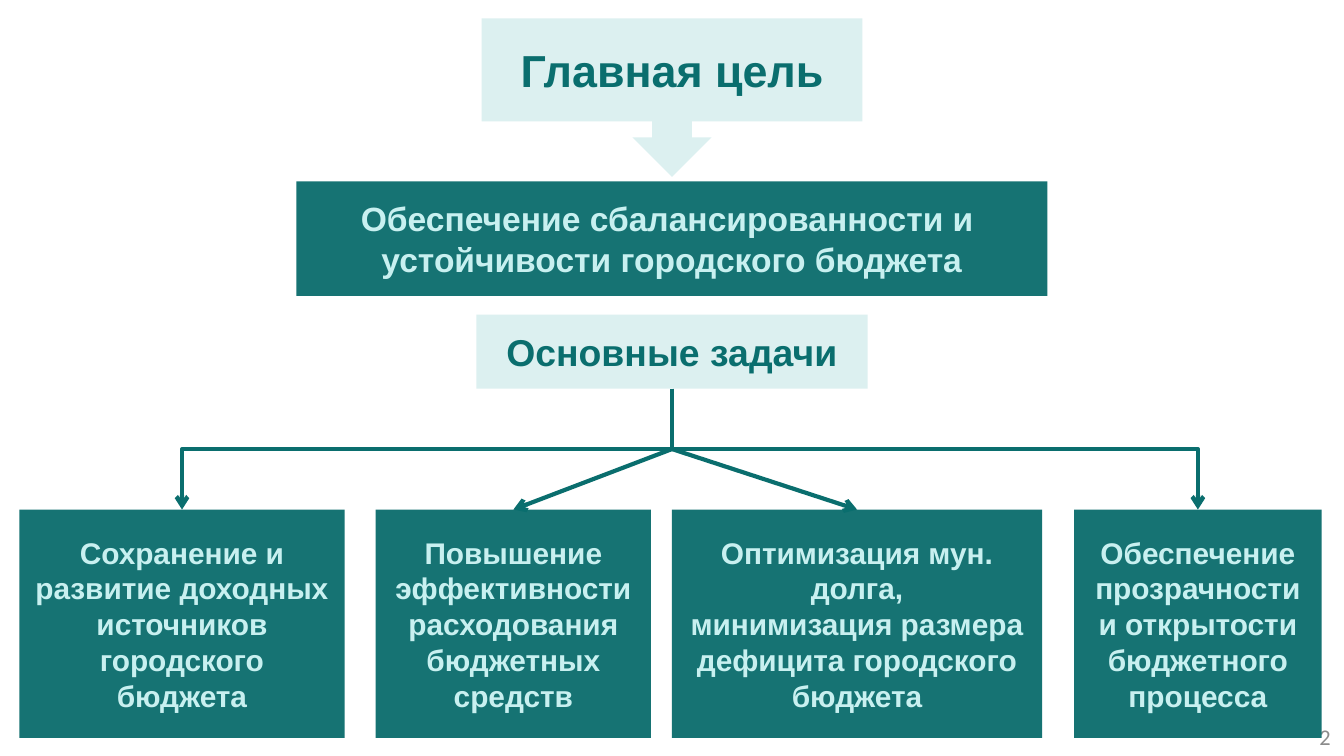
from pptx import Presentation
from pptx.dml.color import RGBColor
from pptx.enum.shapes import MSO_CONNECTOR, MSO_SHAPE
from pptx.enum.text import MSO_ANCHOR, PP_ALIGN
from pptx.oxml import parse_xml
from pptx.oxml.ns import nsdecls
from pptx.util import Pt

RECT = MSO_SHAPE.RECTANGLE
CALLOUT = MSO_SHAPE.DOWN_ARROW_CALLOUT
LINE, ELBOW = MSO_CONNECTOR.STRAIGHT, MSO_CONNECTOR.ELBOW
MIDDLE = MSO_ANCHOR.MIDDLE
CENTER, RIGHT = PP_ALIGN.CENTER, PP_ALIGN.RIGHT

WIDTH, HEIGHT = 720, 405
MID = WIDTH / 2
STEM, FORK, TOP = 208.2, 240.6, 273
TASK_H = 122.4

COLORS = {
    "pale": "DCF0F0",
    "teal": "167373",
    "dark": "0A6E6E",
    "light": "C8F0F0",
    "gray": "8C8C8C",
}

TASKS = [
    (10.4, 174.2, ["Сохранение и развитие доходных источников городского бюджета"]),
    (201.3, 147.5, ["Повышение эффективности расходования бюджетных средств"]),
    (360, 198.3, ["Оптимизация мун. долга,",
                   "минимизация размера дефицита городского бюджета"]),
    (575.4, 132.7, ["Обеспечение прозрачности и открытости бюджетного процесса"]),
]


def color(name):
    return RGBColor.from_string(COLORS[name])


def write(shape, lines, size, ink, bold=True, face="Arial", align=CENTER):
    frame = shape.text_frame
    frame.word_wrap = True
    frame.vertical_anchor = MIDDLE
    frame.text = "\n".join(lines)
    for para in frame.paragraphs:
        para.alignment = align
        font = para.font
        font.name, font.size, font.bold = face, Pt(size), bold
        font.color.rgb = color(ink)


def add_box(slide, left, top, width, height, lines, size, fill, ink, kind=RECT):
    box = slide.shapes.add_shape(kind, Pt(left), Pt(top), Pt(width), Pt(height))
    box.shadow.inherit = False
    box.fill.solid()
    box.fill.fore_color.rgb = color(fill)
    box.line.fill.background()
    write(box, lines, size, ink)


def add_arrow(slide, kind, x1, y1, x2, y2):
    line = slide.shapes.add_connector(kind, Pt(x1), Pt(y1), Pt(x2), Pt(y2))
    line.line.color.rgb = color("dark")
    line.line.width = Pt(2.25)
    line.line._get_or_add_ln().append(
        parse_xml(f'<a:tailEnd {nsdecls("a")} type="arrow"/>'))
    props = line._element.spPr
    props.append(parse_xml(f'<a:effectLst {nsdecls("a")}/>'))
    return props


def add_bend(slide, x1, y1, x2, y2):
    mid_x, mid_y = (x1 + x2) / 2, (y1 + y2) / 2
    half_w, half_h = (y2 - y1) / 2, abs(x2 - x1) / 2
    turn = 90
    if x2 > x1:
        half_w, turn = -half_w, 270
    props = add_arrow(slide, ELBOW, mid_x - half_w, mid_y - half_h,
                      mid_x + half_w, mid_y + half_h)
    props.xfrm.set("rot", str(turn * 60000))


def add_number(slide):
    box = slide.shapes.add_textbox(Pt(696), Pt(384), Pt(24), Pt(21.6))
    write(box, ["2"], 12, "gray", False, "Calibri", RIGHT)


def main():
    deck = Presentation()
    deck.slide_width, deck.slide_height = Pt(WIDTH), Pt(HEIGHT)
    slide = deck.slides.add_slide(deck.slide_layouts[6])

    add_number(slide)
    add_box(slide, 258, 9.8, 204, 85, ["Главная цель"], 24, "pale", "dark", CALLOUT)
    add_box(slide, 158.8, 97.2, 402.4, 61.4,
            ["Обеспечение сбалансированности и ", "устойчивости городского бюджета"],
            18, "teal", "light")
    add_box(slide, 255.2, 168.6, 209.6, 39.6, ["Основные задачи"], 20, "pale", "dark")

    for left, width, lines in TASKS:
        add_box(slide, left, TOP, width, TASK_H, lines, 16, "teal", "light")

    first, second, third, last = [left + width / 2 for left, width, _ in TASKS]
    for goal in (last, first):
        add_bend(slide, MID, STEM, goal, TOP)
    for goal in (second, third):
        add_arrow(slide, LINE, MID, FORK, goal, TOP)

    deck.save("out.pptx")


if __name__ == "__main__":
    main()
